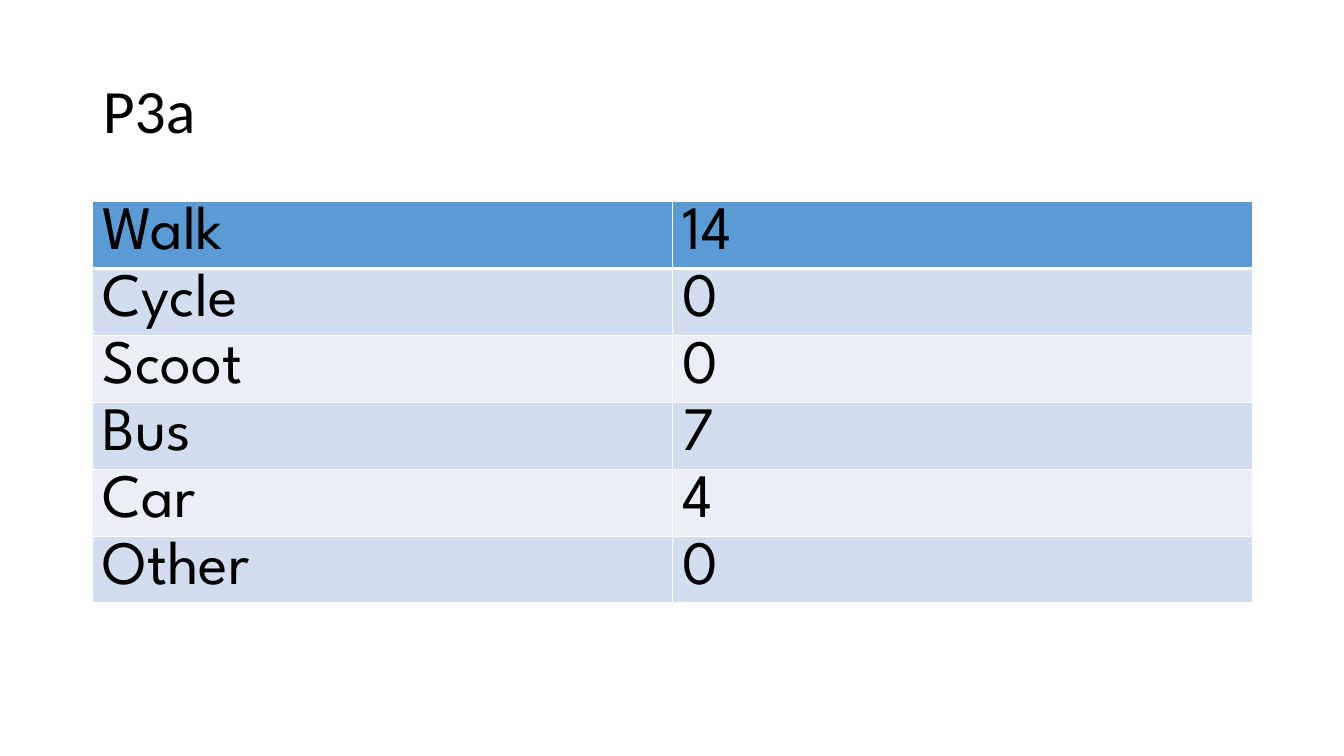
import pptx
import pptx.util
import pptx.dml.color
import pptx.enum.text
import pptx.oxml
import pptx.oxml.ns

Inches = pptx.util.Inches
Pt = pptx.util.Pt

TRAVEL = [("Walk", 14), ("Cycle", 0), ("Scoot", 0),
          ("Bus", 7), ("Car", 4), ("Other", 0)]
HEAD = "5B9BD5"
BANDS = ["EAEFF7", "D2DEEF"]
BLACK = "000000"
WHITE = "FFFFFF"


def color(code):
    return pptx.dml.color.RGBColor.from_string(code)


def style(para, font):
    for run in para.runs:
        run.font.name = font
        run.font.size = Pt(44)
        run.font.bold = False
        run.font.color.rgb = color(BLACK)


def edge(cell, side, width):
    props = cell._tc.get_or_add_tcPr()
    space = pptx.oxml.ns.nsdecls("a")
    line = pptx.oxml.parse_xml(
        f'<a:{side} {space} w="{Pt(width)}"><a:solidFill>'
        f'<a:srgbClr val="{WHITE}"/></a:solidFill></a:{side}>')
    props.append(line)


def title(slide, left, top, width, height):
    shape = slide.shapes.title
    shape.left, shape.top = Inches(left), Inches(top)
    shape.width, shape.height = Inches(width), Inches(height)
    frame = shape.text_frame
    frame.text = "P3a"
    frame.vertical_anchor = pptx.enum.text.MSO_ANCHOR.MIDDLE
    para = frame.paragraphs[0]
    para.alignment = pptx.enum.text.PP_ALIGN.LEFT
    para.line_spacing = 0.9
    style(para, "Calibri")


def table(slide, left, top, width, height):
    grid = slide.shapes.add_table(
        len(TRAVEL), 2, Inches(left), Inches(top),
        Inches(width), Inches(height)).table
    for row, record in enumerate(TRAVEL):
        for col, value in enumerate(record):
            cell = grid.cell(row, col)
            cell.text_frame.text = str(value)
            style(cell.text_frame.paragraphs[0], "League Spartan")
            for side in ("lnL", "lnR", "lnT", "lnB"):
                heavy = (row, side) in ((0, "lnB"), (1, "lnT"))
                edge(cell, side, 3 if heavy else 1)
            cell.fill.solid()
            cell.fill.fore_color.rgb = color(BANDS[row % 2] if row else HEAD)


def main():
    deck = pptx.Presentation()
    deck.slide_width = Inches(13.33)
    deck.slide_height = Inches(7.5)
    slide = deck.slides.add_slide(deck.slide_layouts[5])
    title(slide, 0.92, 0.4, 11.5, 1.45)
    table(slide, 0.92, 2, 11.5, 3.96)
    deck.save("out.pptx")


if __name__ == "__main__":
    main()
